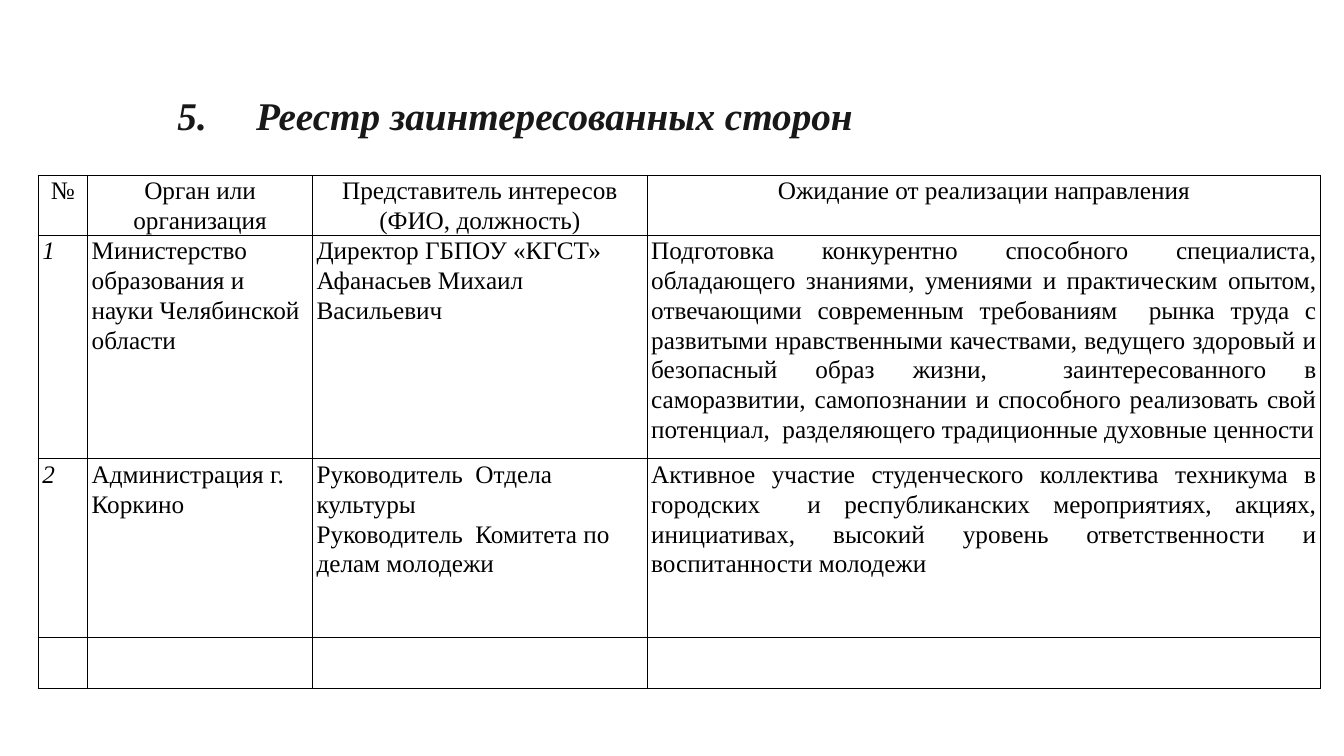
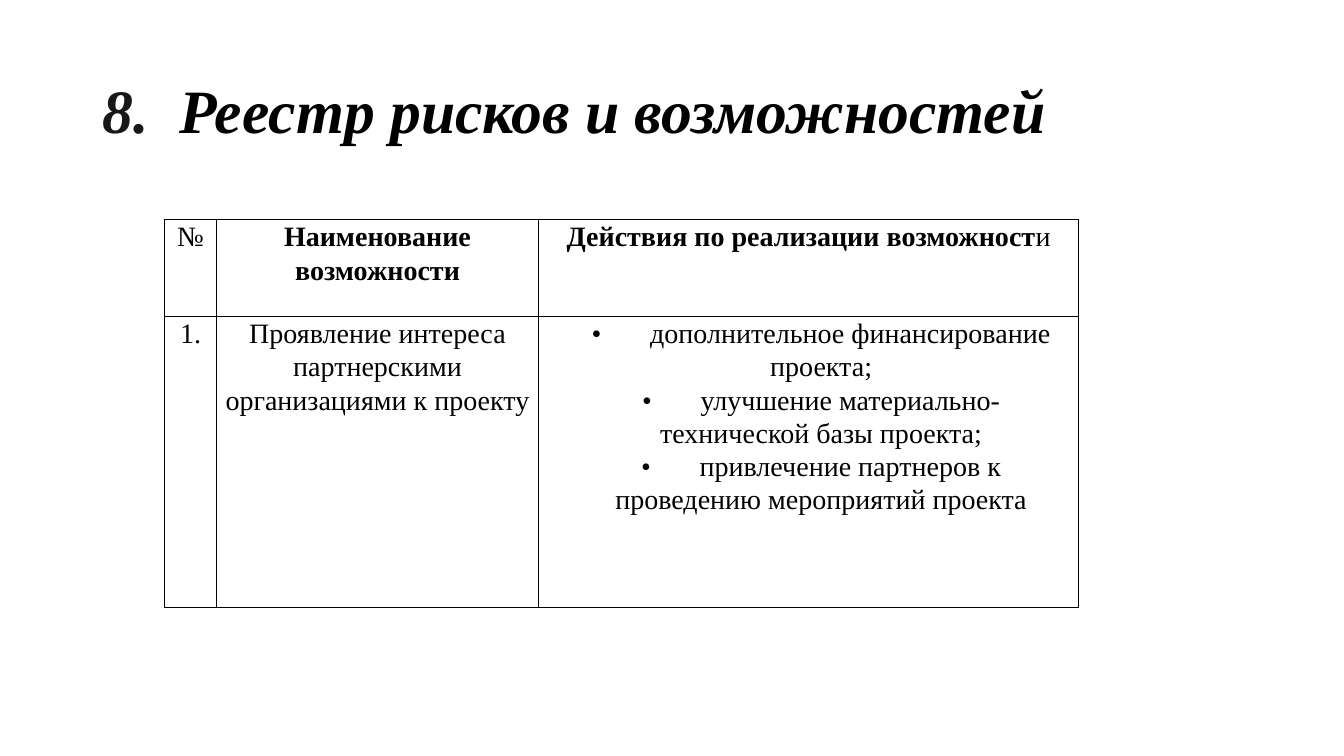
from lxml.etree import SubElement
from pptx import Presentation
from pptx.dml.color import RGBColor
from pptx.enum.text import MSO_ANCHOR, PP_ALIGN
from pptx.oxml.ns import qn
from pptx.util import Inches, Pt

COLORS = {"title": "181818", "text": "000000", "border": "000000"}
FONT = "Times New Roman"
TABLE_SPACING = 1.07

STAKEHOLDER_HEADINGS = [
    "№",
    "Орган или организация",
    "Представитель интересов (ФИО, должность)",
    "Ожидание от реализации направления",
]
STAKEHOLDERS = [
    [
        "1",
        "Министерство образования и науки Челябинской области",
        "Директор ГБПОУ «КГСТ» Афанасьев Михаил Васильевич",
        "Подготовка конкурентно способного специалиста, обладающего знаниями, "
        "умениями и практическим опытом, отвечающими современным требованиям  рынка "
        "труда с развитыми нравственными качествами, ведущего здоровый и безопасный "
        "образ жизни,  заинтересованного в саморазвитии, самопознании и способного "
        "реализовать свой потенциал,  разделяющего традиционные духовные ценности",
    ],
    [
        "2",
        "Администрация г. Коркино",
        "Руководитель  Отдела культуры\nРуководитель  Комитета по делам молодежи",
        "Активное участие студенческого коллектива техникума в городских  и "
        "республиканских мероприятиях, акциях, инициативах, высокий уровень "
        "ответственности и воспитанности молодежи",
    ],
]
OPPORTUNITY_HEADINGS = ["№", "Наименование возможности", "Действия по реализации возможност"]
OPPORTUNITY = ["1.", "Проявление интереса партнерскими организациями к проекту"]
ACTIONS = [
    "дополнительное финансирование проекта;",
    "улучшение материально-технической базы проекта;",
    "привлечение партнеров к проведению мероприятий проекта",
]


def add_text(paragraph, text, size=18, color="text", bold=False, italic=False):
    run = paragraph.add_run()
    run.text = text
    font = run.font
    font.name = FONT
    font.size = Pt(size)
    font.bold = bold
    font.italic = italic
    font.color.rgb = RGBColor.from_string(COLORS[color])


def add_tab_stop(paragraph, position):
    properties = paragraph._p.get_or_add_pPr()
    stops = SubElement(properties, qn("a:tabLst"))
    SubElement(stops, qn("a:tab"), pos=str(Inches(position)), algn="l")


def add_title(slide, number, text, size, color, tab, spacing, margin=0.1):
    title = slide.shapes.title
    title.left, title.top = Inches(0.92), Inches(0.4)
    title.width, title.height = Inches(11.5), Inches(1.45)
    frame = title.text_frame
    frame.vertical_anchor = MSO_ANCHOR.MIDDLE
    frame.margin_left = Inches(margin)
    paragraph = frame.paragraphs[0]
    paragraph.alignment = PP_ALIGN.LEFT
    paragraph.line_spacing = spacing
    add_tab_stop(paragraph, tab)
    add_text(paragraph, f"{number}.\t", size=size, color="title", bold=True, italic=True)
    add_text(paragraph, text, size=size, color=color, bold=True, italic=True)


def set_borders(cell):
    properties = cell._tc.get_or_add_tcPr()
    for side in ("a:lnL", "a:lnR", "a:lnT", "a:lnB"):
        line = SubElement(properties, qn(side), w=str(Pt(1)))
        fill = SubElement(line, qn("a:solidFill"))
        SubElement(fill, qn("a:srgbClr"), val=COLORS["border"])


def add_table(slide, left, top, widths, heights, margin):
    frame = slide.shapes.add_table(
        len(heights), len(widths), Inches(left), Inches(top),
        Inches(sum(widths)), Inches(sum(heights)),
    )
    table = frame.table
    table.first_row = False
    table.horz_banding = False
    for column, width in zip(table.columns, widths):
        column.width = Inches(width)
    for row, height in zip(table.rows, heights):
        row.height = Inches(height)
    for cell in table.iter_cells():
        cell.margin_left = cell.margin_right = Inches(margin)
        cell.margin_top = cell.margin_bottom = 0
        set_borders(cell)
        cell.fill.background()
    return table


def fill_cell(cell, text, alignment=PP_ALIGN.CENTER, tab=None, **text_format):
    frame = cell.text_frame
    for index, line in enumerate(text.split("\n")):
        paragraph = frame.add_paragraph() if index else frame.paragraphs[0]
        paragraph.alignment = alignment
        paragraph.line_spacing = TABLE_SPACING
        if tab:
            add_tab_stop(paragraph, tab)
        add_text(paragraph, line, **text_format)


def build_stakeholders(slide):
    add_title(slide, 5, "Реестр заинтересованных сторон", size=28, color="title",
              tab=0.78, spacing=1.07, margin=0.84)
    table = add_table(slide, 0.38, 1.74, [0.49, 2.23, 3.32, 6.68],
                      [0.59, 2.22, 1.77, 0.51], margin=0.04)
    for column, heading in enumerate(STAKEHOLDER_HEADINGS):
        fill_cell(table.cell(0, column), heading)
    alignments = [PP_ALIGN.LEFT] * 3 + [PP_ALIGN.JUSTIFY]
    for row, texts in enumerate(STAKEHOLDERS, start=1):
        for column, (text, alignment) in enumerate(zip(texts, alignments)):
            fill_cell(table.cell(row, column), text, alignment, italic=column == 0)


def build_opportunities(slide):
    add_title(slide, 8, "Реестр рисков и возможностей", size=44, color="text",
              tab=0.76, spacing=0.9)
    table = add_table(slide, 1.63, 2.18, [0.52, 3.19, 5.36], [0.96, 2.89], margin=0.07)
    for column, heading in enumerate(OPPORTUNITY_HEADINGS):
        fill_cell(table.cell(0, column), heading, size=20, bold=column > 0)
    add_text(table.cell(0, 2).text_frame.paragraphs[0], "и", size=20)
    for column, text in enumerate(OPPORTUNITY):
        fill_cell(table.cell(1, column), text, size=20)
    actions = table.cell(1, 2)
    actions.margin_left = Inches(0.32)
    fill_cell(actions, "\n".join(f"•\t{action}" for action in ACTIONS), tab=0.58, size=20)


def main():
    presentation = Presentation()
    presentation.slide_width = Inches(13.33)
    presentation.slide_height = Inches(7.5)
    title_only = presentation.slide_layouts[5]
    for build in (build_stakeholders, build_opportunities):
        build(presentation.slides.add_slide(title_only))
    presentation.save("out.pptx")


if __name__ == "__main__":
    main()
